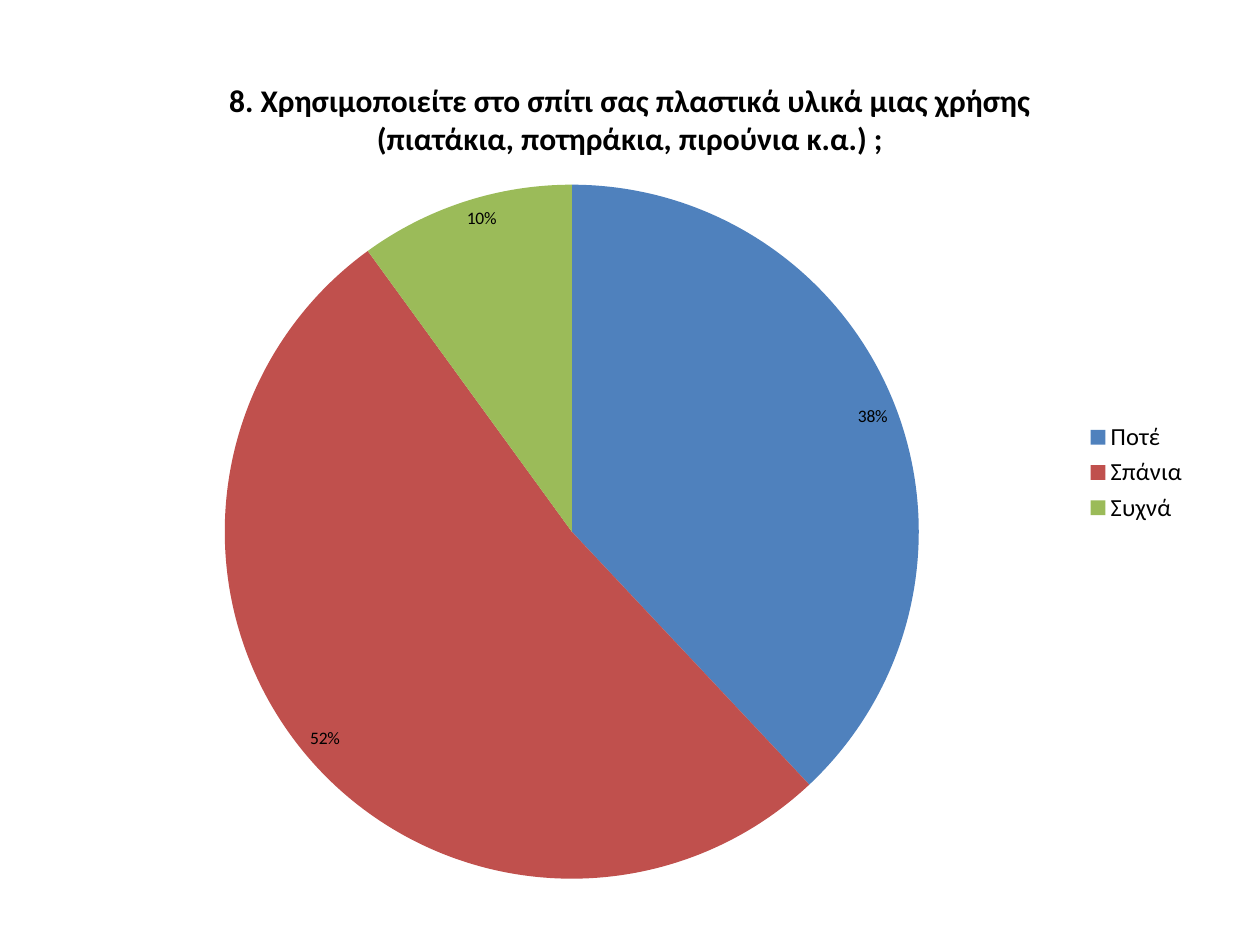
import dataclasses

import pptx
import pptx.chart.data
import pptx.dml.color
import pptx.enum.chart
import pptx.oxml
import pptx.oxml.ns
import pptx.util

COLORS = {"text": "000000", "never": "4F81BD", "rarely": "C0504D", "often": "9BBB59"}
FONT = "Calibri"
TITLE = "8. Χρησιμοποιείτε στο σπίτι σας πλαστικά υλικά μιας χρήσης (πιατάκια, ποτηράκια, πιρούνια κ.α.) ;"


@dataclasses.dataclass
class Answer:
    label: str
    percent: int
    color: str


@dataclasses.dataclass
class Area:
    x: float
    y: float
    w: float
    h: float


ANSWERS = [
    Answer("Ποτέ ", 38, "never"),
    Answer("Σπάνια", 52, "rarely"),
    Answer("Συχνά ", 10, "often"),
]
CHART = Area(0.047, 0.052, 0.906, 0.896)
PIE = Area(0.145, 0.16, 0.608, 0.82)


def rgb(name: str) -> pptx.dml.color.RGBColor:
    return pptx.dml.color.RGBColor.from_string(COLORS[name])


def style_font(font, size: int, bold: bool = False) -> None:
    font.name = FONT
    font.size = pptx.util.Pt(size)
    font.bold = bold
    font.color.rgb = rgb("text")


def place_plot(chart, area: Area) -> None:
    plot_area = chart._chartSpace.chart.plotArea
    for old in plot_area.findall(pptx.oxml.ns.qn("c:layout")):
        plot_area.remove(old)
    values = "".join(f'<c:{k} val="{v}"/>' for k, v in dataclasses.asdict(area).items())
    plot_area.insert(0, pptx.oxml.parse_xml(
        f'<c:layout {pptx.oxml.ns.nsdecls("c")}><c:manualLayout>'
        '<c:layoutTarget val="inner"/><c:xMode val="edge"/><c:yMode val="edge"/>'
        f'{values}</c:manualLayout></c:layout>'))


def add_pie(prs, s, area: Area, answers: list[Answer]) -> None:
    data = pptx.chart.data.CategoryChartData()
    data.categories = [a.label for a in answers]
    data.add_series("Series 1", [a.percent for a in answers])
    w, h = prs.slide_width, prs.slide_height
    chart = s.shapes.add_chart(
        pptx.enum.chart.XL_CHART_TYPE.PIE,
        int(area.x * w), int(area.y * h), int(area.w * w), int(area.h * h), data).chart
    style_font(chart.font, 10)

    chart.has_title = True
    chart.chart_title.include_in_layout = False
    p = chart.chart_title.text_frame.paragraphs[0]
    r = p.add_run()
    r.text = TITLE
    style_font(r.font, 18, True)

    chart.has_legend = True
    chart.legend.position = pptx.enum.chart.XL_LEGEND_POSITION.RIGHT
    chart.legend.include_in_layout = False
    style_font(chart.legend.font, 14)

    plot = chart.plots[0]
    plot.vary_by_categories = True
    for i, answer in enumerate(answers):
        fill = plot.series[0].points[i].format.fill
        fill.solid()
        fill.fore_color.rgb = rgb(answer.color)

    plot.has_data_labels = True
    labels = plot.data_labels
    labels.show_percentage = True
    labels.show_value = False
    labels.number_format = "0%"
    labels.number_format_is_linked = False
    labels.position = pptx.enum.chart.XL_LABEL_POSITION.INSIDE_END
    style_font(labels.font, 10)
    place_plot(chart, PIE)


def main() -> None:
    prs = pptx.Presentation()
    prs.slide_width = pptx.util.Inches(10)
    prs.slide_height = pptx.util.Inches(7.5)
    s = prs.slides.add_slide(prs.slide_layouts[6])
    add_pie(prs, s, CHART, ANSWERS)
    prs.save("out.pptx")


if __name__ == "__main__":
    main()
